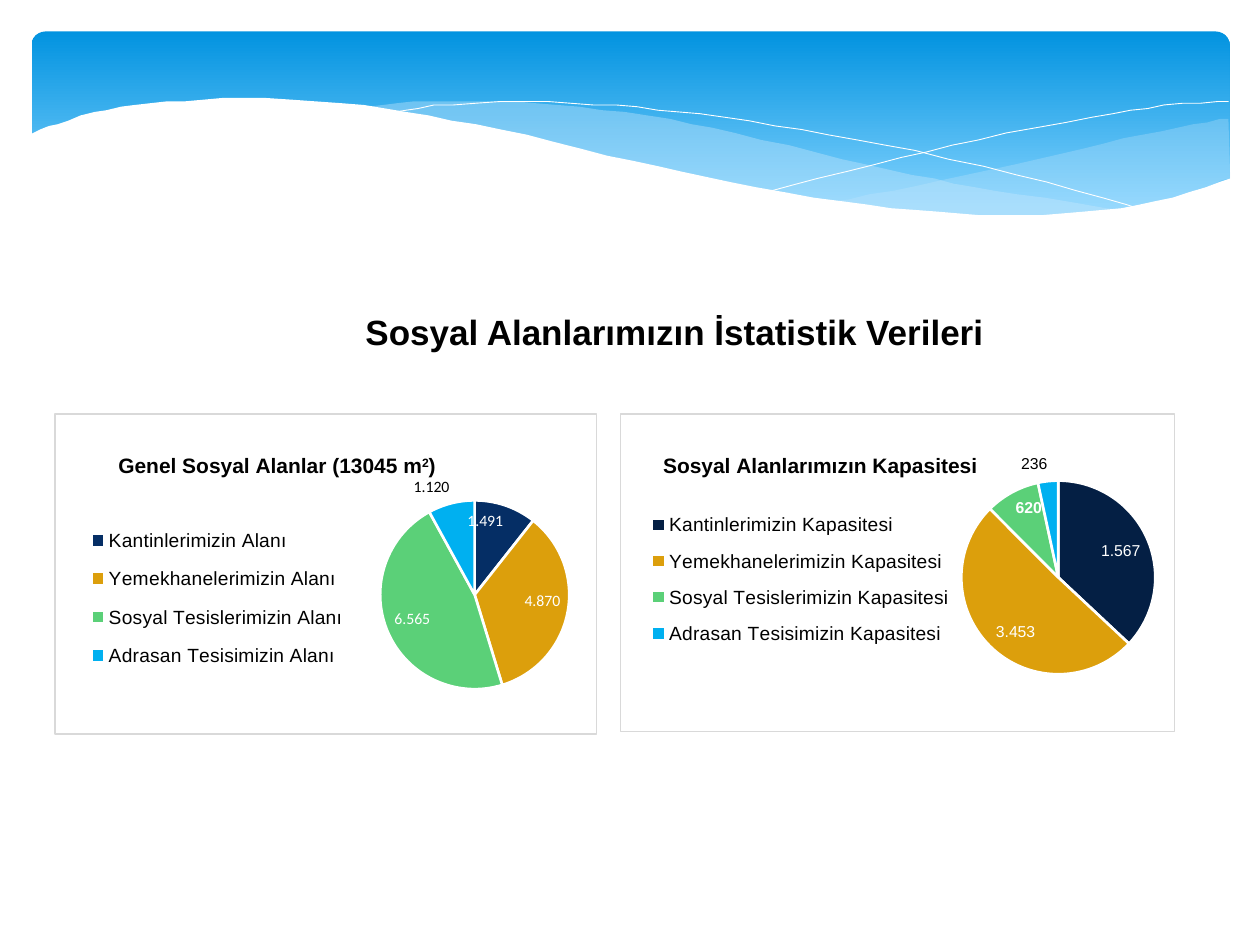
from lxml import etree
from pptx import Presentation
from pptx.chart.data import CategoryChartData
from pptx.dml.color import RGBColor
from pptx.enum.chart import XL_CHART_TYPE, XL_LABEL_POSITION, XL_LEGEND_POSITION
from pptx.enum.shapes import MSO_SHAPE
from pptx.enum.text import MSO_ANCHOR, PP_ALIGN
from pptx.oxml import parse_xml
from pptx.oxml.ns import nsdecls, qn
from pptx.util import Pt

PIE = XL_CHART_TYPE.PIE
INSIDE, OUTSIDE = XL_LABEL_POSITION.INSIDE_END, XL_LABEL_POSITION.OUTSIDE_END
LEGEND_BOTTOM = XL_LEGEND_POSITION.BOTTOM
ROUNDED = MSO_SHAPE.ROUNDED_RECTANGLE
MIDDLE, LEFT = MSO_ANCHOR.MIDDLE, PP_ALIGN.LEFT
BLACK, WHITE, VEIL = "000000", "FFFFFF", "C6E7FC"

# Anchor points of the banner's curves, in points
RIGHT_VEIL = [
    [(702, 67.7), (673.2, 72.7), (630.7, 82.1), (579.6, 94.3), (524.9, 105.8), (475.9, 115.2)],
    [(475.9, 115.2), (517.7, 120.2), (562.3, 123.8), (607.7, 123.1), (645.8, 118.8),
     (678.2, 110.9), (702.7, 101.5)]]
MIDDLE_VEIL = [
    [(643, 120.2), (581, 110.9), (533.5, 102.2), (481, 90.7), (420.5, 76.3), (370.1, 66.2),
     (318.2, 59.8), (273.6, 57.6), (236.2, 58.3), (205.9, 61.9)],
    [(205.9, 61.9), (246.2, 67.7), (290.9, 76.3), (353.5, 90.7), (407.5, 103), (456.5, 112.3),
     (510.5, 119.5), (556.6, 123.8), (596.2, 124.6), (624.2, 122.4), (643, 120.2)]]
FALLING_LINE = [[(222.5, 64.8), (247.7, 60.5), (299.5, 58.3), (352.1, 60.5), (400.3, 65.5),
                 (457.9, 74.2), (523.4, 86.4), (598.3, 104.4), (653, 119.5)]]
RISING_LINE = [[(441.4, 108.7), (500.4, 93.6), (558.7, 79.9), (623.5, 67), (665.3, 60.5),
                (702, 57.6)]]
WHITE_WAVE = [
    [(703.4, 101.5), (669.6, 113), (630, 120.2), (582.5, 123.1), (535.7, 121), (481, 115.2),
     (416.9, 103.7), (362.2, 92.2), (301, 77), (244.8, 66.2), (195.1, 59), (139, 56.2),
     (95, 58.3), (61.2, 62.6), (33.1, 70.6), (16.6, 77)],
    [(16.6, 161.3), (703.4, 161.3)]]


def color(hex_string):
    return RGBColor.from_string(hex_string)


def format_font(font, name, size, hex_string, bold=False):
    font.name, font.size, font.bold = name, Pt(size), bold
    font.color.rgb = color(hex_string)


def smooth_curve(anchors, steps=4):
    """Catmull-Rom points through the anchors; two anchors stay a straight line."""
    if len(anchors) < 3:
        return anchors
    padded = [anchors[0], *anchors, anchors[-1]]
    points = [anchors[0]]
    for a, b, c, d in zip(padded, padded[1:], padded[2:], padded[3:]):
        for step in range(1, steps + 1):
            t = step / steps
            points.append(tuple(
                0.5 * (2 * q + (r - p) * t + (2 * p - 5 * q + 4 * r - s) * t ** 2
                       + (3 * q - p - 3 * r + s) * t ** 3)
                for p, q, r, s in zip(a, b, c, d)))
    return points


def add_curve(slide, segments, fill=None, opacity=100):
    """A filled outline, or a thin white line when no fill is given."""
    points = [point for segment in segments for point in smooth_curve(segment)]
    builder = slide.shapes.build_freeform(*points[0], scale=Pt(1))
    builder.add_line_segments(points[1:], close=fill is not None)
    shape = builder.convert_to_shape()
    shape.shadow.inherit = False
    if fill is None:
        shape.fill.background()
        shape.line.color.rgb = color(WHITE)
        shape.line.width = Pt(0.5)
        return
    shape.line.fill.background()
    shape.fill.solid()
    shape.fill.fore_color.rgb = color(fill)
    if opacity < 100:
        rgb = shape.fill._xPr.find(".//" + qn("a:srgbClr"))
        etree.SubElement(rgb, qn("a:alpha"), val=str(opacity * 1000))


def add_banner(slide):
    panel = slide.shapes.add_shape(ROUNDED, Pt(18), Pt(18), Pt(684.7), Pt(112.3))
    panel.adjustments[0] = 0.071
    panel.shadow.inherit = False
    panel.line.fill.background()
    panel.fill.gradient()
    panel.fill.gradient_angle = 270
    stops = panel.fill.gradient_stops
    for stop, position, shade in zip(stops, (0, 0.9), ("0293E0", "83D3FE")):
        stop.position = position
        stop.color.rgb = color(shade)
    add_curve(slide, RIGHT_VEIL, VEIL, 29)
    add_curve(slide, MIDDLE_VEIL, VEIL, 40)
    add_curve(slide, FALLING_LINE)
    add_curve(slide, RISING_LINE)
    add_curve(slide, WHITE_WAVE, WHITE)


def add_title(slide, text):
    title = slide.shapes.title
    title.left, title.top, title.width, title.height = Pt(201.6), Pt(173.5), Pt(370), Pt(31.7)
    text_frame = title.text_frame
    text_frame.text = text
    text_frame.word_wrap = False
    text_frame.vertical_anchor = MIDDLE
    paragraph = text_frame.paragraphs[0]
    paragraph.alignment = LEFT
    format_font(paragraph.runs[0].font, "Arial", 20, BLACK, True)


def set_layout(parent, index, **fractions):
    """Place a chart part by fractions of the chart's size."""
    for old in parent.findall(qn("c:layout")):
        parent.remove(old)
    target = '<c:layoutTarget val="inner"/>' if parent.tag == qn("c:plotArea") else ""
    modes = "".join(f'<c:{key}Mode val="edge"/>' for key in "xy")
    sizes = "".join(f'<c:{key} val="{value}"/>' for key, value in fractions.items())
    parent.insert(index, parse_xml(
        f'<c:layout {nsdecls("c")}><c:manualLayout>{target}{modes}{sizes}'
        '</c:manualLayout></c:layout>'))


def add_chart_frame(chart):
    chart._chartSpace.find(qn("c:chart")).addnext(parse_xml(
        f'<c:spPr {nsdecls("c", "a")}><a:solidFill><a:srgbClr val="FFFFFF"/></a:solidFill>'
        '<a:ln w="9525"><a:solidFill><a:srgbClr val="D9D9D9"/></a:solidFill></a:ln></c:spPr>'))


def add_pie(slide, box, title, slices, label_font, title_at, legend_at, plot_at):
    """Slices are (category, value, colour, label text or None, label position)."""
    data = CategoryChartData()
    data.categories = [item[0] for item in slices]
    data.add_series("Series 1", [item[1] for item in slices])
    chart = slide.shapes.add_chart(PIE, *map(Pt, box), data).chart
    format_font(chart.font, "Cabin", 10, BLACK)
    add_chart_frame(chart)

    # Title, with an optional superscript ending
    paragraph = chart.chart_title.text_frame.paragraphs[0]
    for text in title:
        run = paragraph.add_run()
        run.text = text
        format_font(run.font, "Arial", 12, BLACK, True)
        if text == "2":
            run._r.get_or_add_rPr().set("baseline", "30000")
    set_layout(chart.chart_title._element, 1, **title_at)

    # Legend and plot area
    chart.has_legend = True
    chart.legend.position = LEGEND_BOTTOM
    chart.legend.include_in_layout = False
    format_font(chart.legend.font, "Arial", 11, BLACK)
    set_layout(chart.legend._element, 1, **legend_at)
    set_layout(chart._chartSpace.find(".//" + qn("c:plotArea")), 0, **plot_at)

    # Slices and their labels
    plot = chart.plots[0]
    plot.vary_by_categories = True
    series = plot.series[0]
    series.data_labels.show_value = True
    series.data_labels.position = INSIDE
    format_font(series.data_labels.font, label_font, 9, WHITE, True)
    for index, (_, _, shade, label, position) in enumerate(slices):
        point = series.points[index]
        point.format.fill.solid()
        point.format.fill.fore_color.rgb = color(shade)
        point.format.line.color.rgb = color(WHITE)
        point.format.line.width = Pt(1.5)
        if label:
            paragraph = point.data_label.text_frame.paragraphs[0]
            paragraph.text = label
            format_font(paragraph.runs[0].font, label_font, 9,
                        BLACK if position == OUTSIDE else WHITE)
            point.data_label.position = position


def main():
    presentation = Presentation()
    presentation.slide_width, presentation.slide_height = Pt(720), Pt(540)
    slide = presentation.slides.add_slide(presentation.slide_layouts[5])
    add_banner(slide)
    add_title(slide, "Sosyal Alanlarımızın İstatistik Verileri")
    # Capacity of the social areas
    add_pie(slide, (354.2, 236.2, 317.5, 182.2), ["Sosyal Alanlarımızın Kapasitesi"],
            [("Kantinlerimizin Kapasitesi", 2526, "041F44", "1.567", INSIDE),
             ("Yemekhanelerimizin Kapasitesi", 3453, "DC9F0C", "3.453", INSIDE),
             ("Sosyal Tesislerimizin Kapasitesi", 620, "5BD078", None, INSIDE),
             ("Adrasan Tesisimizin Kapasitesi", 230, "00B0F0", "236", OUTSIDE)],
            "Arial", dict(x=0.07, y=0.11), dict(x=0.05, y=0.27, w=0.55, h=0.5),
            dict(x=0.61, y=0.21, w=0.36, h=0.61))
    # Size of the social areas
    add_pie(slide, (31, 236.2, 310.3, 183.6), ["Genel Sosyal Alanlar (13045 m", "2", ")"],
            [("Kantinlerimizin Alanı", 1491, "052E65", "1.491", INSIDE),
             ("Yemekhanelerimizin Alanı", 4870, "DC9F0C", "4.870", INSIDE),
             ("Sosyal Tesislerimizin Alanı", 6565, "5BD078", "6.565", INSIDE),
             ("Adrasan Tesisimizin Alanı", 1119, "00B0F0", "1.120", OUTSIDE)],
            "Calibri", dict(x=0.11, y=0.11), dict(x=0.06, y=0.31, w=0.48, h=0.53),
            dict(x=0.6, y=0.27, w=0.35, h=0.59))
    presentation.save("out.pptx")


if __name__ == "__main__":
    main()
